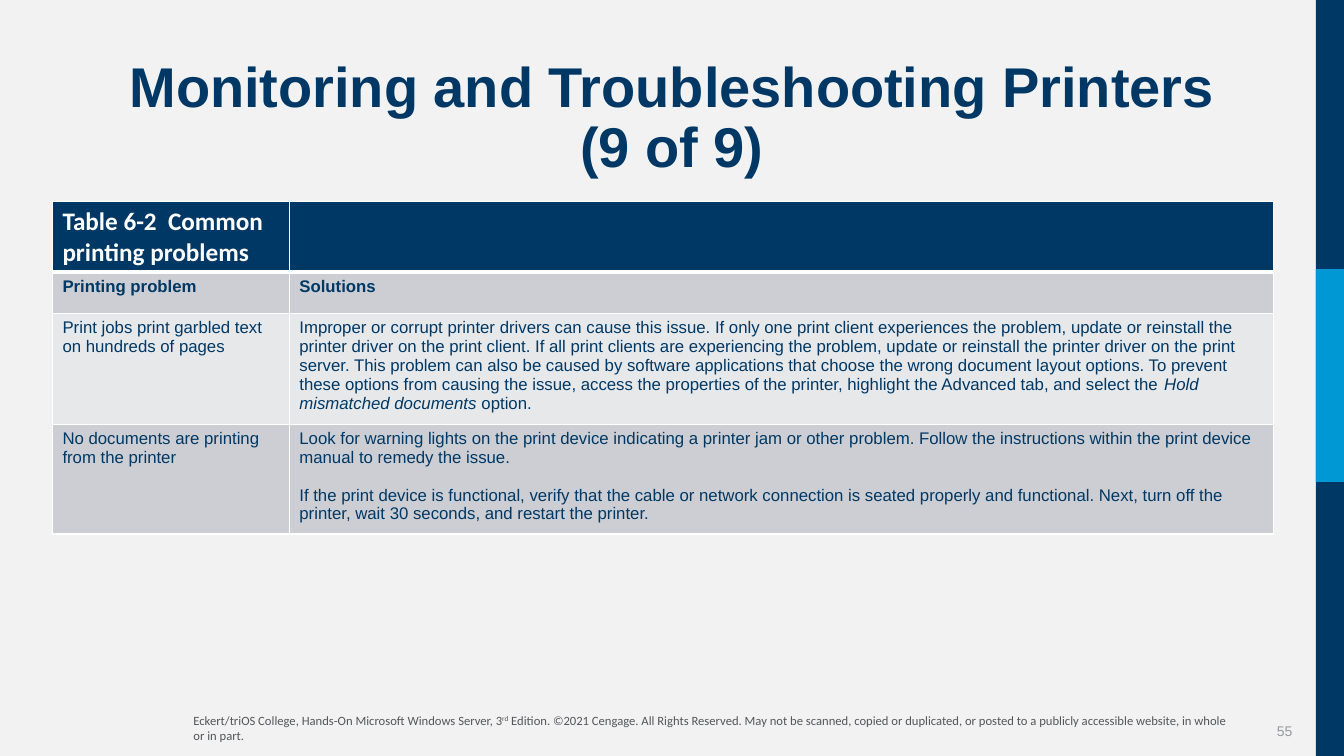
from lxml.etree import SubElement
from pptx import Presentation
from pptx.dml.color import RGBColor
from pptx.enum.shapes import MSO_SHAPE
from pptx.enum.text import MSO_ANCHOR, PP_ALIGN
from pptx.oxml.ns import qn
from pptx.util import Inches, Pt

COLORS = {
    "page": "F2F2F2", "navy": "003865", "sky": "0098D4", "white": "FFFFFF",
    "band": "CCCED3", "light": "E7E8EA", "number": "96999E", "notice": "53565A",
}
GRID = 0.1  # inches per column and per row


def color(name):
    return RGBColor.from_string(COLORS[name])


def units(*counts):
    return [Inches(count * GRID) for count in counts]


def write(paragraph, text, size=12, font="Arial", ink="navy", bold=False,
          italic=False, raised=False, align=None, line=None, before=None):
    """Add text to a paragraph; a newline becomes a line break."""
    for index, part in enumerate(text.split("\n")):
        if index:
            paragraph.add_line_break()
        run = paragraph.add_run()
        run.text = part
        run.font.size = Pt(size)
        run.font.name = font
        run.font.bold = bold
        run.font.italic = italic
        run.font.color.rgb = color(ink)
        if raised:
            run._r.get_or_add_rPr().set("baseline", "30000")
    if align is not None:
        paragraph.alignment = align
    if line is not None:
        paragraph.line_spacing = line
    if before is not None:
        paragraph.space_before = Pt(before)


class Deck:
    def __init__(self, columns, rows):
        self.presentation = Presentation()
        self.presentation.slide_width, self.presentation.slide_height = units(columns, rows)
        self.slide = self.presentation.slides.add_slide(self.presentation.slide_layouts[5])
        self.slide.background.fill.solid()
        self.slide.background.fill.fore_color.rgb = color("page")

    def title(self, text, left, top, width, height):
        heading = self.slide.shapes.title
        heading.left, heading.top, heading.width, heading.height = units(left, top, width, height)
        heading.text_frame.vertical_anchor = MSO_ANCHOR.MIDDLE
        write(heading.text_frame.paragraphs[0], text, size=40, bold=True,
              align=PP_ALIGN.CENTER, line=0.9)

    def bar(self, fill, left, top, width, height):
        band = self.slide.shapes.add_shape(MSO_SHAPE.RECTANGLE, *units(left, top, width, height))
        band.shadow.inherit = False
        band.fill.solid()
        band.fill.fore_color.rgb = color(fill)
        band.line.fill.background()

    def label(self, pieces, left, top, width, height, anchor=MSO_ANCHOR.TOP, **style):
        frame = self.slide.shapes.add_textbox(*units(left, top, width, height)).text_frame
        frame.word_wrap = True
        frame.vertical_anchor = anchor
        for text, extra in pieces:
            write(frame.paragraphs[0], text, **style, **extra)

    def border(self, cell, widths):
        properties = cell._tc.get_or_add_tcPr()
        for position, (side, width) in enumerate(widths.items()):
            edge = SubElement(properties, qn(f"a:ln{side}"), w=str(Pt(width)))
            fill = SubElement(edge, qn("a:solidFill"))
            SubElement(fill, qn("a:srgbClr"), val=COLORS["white"])
            properties.insert(position, edge)

    def table(self, rows, fills, widths, row_height, left, top):
        grid = self.slide.shapes.add_table(
            len(rows), len(widths), *units(left, top, sum(widths), row_height * len(rows))).table
        for column, width in zip(grid.columns, units(*widths)):
            column.width = width
        for r, (row, fill) in enumerate(zip(rows, fills)):
            for c, paragraphs in enumerate(row):
                cell = grid.cell(r, c)
                cell.fill.solid()
                cell.fill.fore_color.rgb = color(fill)
                self.border(cell, {"L": 1, "R": 1, "T": 3 if r == 1 else 1,
                                   "B": 3 if r == 0 else 1})
                for index, pieces in enumerate(paragraphs):
                    frame = cell.text_frame
                    paragraph = frame.add_paragraph() if index else frame.paragraphs[0]
                    for text, style in pieces:
                        write(paragraph, text, **style)


PROBLEMS = [
    # Table caption
    [[[("Table 6-2  Common printing problems",
        dict(size=18, font="Calibri", ink="white", bold=True))]], []],
    # Column headings
    [[[("Printing problem", dict(bold=True))]], [[("Solutions", dict(bold=True))]]],
    # Garbled text
    [[[("Print jobs print garbled text on hundreds of pages", {})]],
     [[("Improper or corrupt printer drivers can cause this issue. If only one print client "
        "experiences the problem, update or reinstall the printer driver on the print client. "
        "If all print clients are experiencing the problem, update or reinstall the printer "
        "driver on the print server. This problem can also be caused by software applications "
        "that choose the wrong document layout options. To prevent these options from causing "
        "the issue, access the properties of the printer, highlight the Advanced tab, and "
        "select the ", {}),
       ("Hold mismatched documents ", dict(italic=True)),
       ("option.", {})]]],
    # Nothing printing
    [[[("No documents are printing from the printer", {})]],
     [[("Look for warning lights on the print device indicating a printer jam or other problem. "
        "Follow the instructions within the print device manual to remedy the issue.", {})],
      [("If the print device is functional, verify that the cable or network connection is "
        "seated properly and functional. Next, turn off the printer, wait 30 seconds, and "
        "restart the printer.", dict(before=13.4))]]],
]
COPYRIGHT = [
    ("Eckert/triOS College, Hands-On Microsoft Windows Server, 3", {}),
    ("rd", dict(raised=True)),
    ("\u00a0Edition. ©2021 Cengage. All Rights Reserved. May not be scanned, copied or "
     "duplicated, or posted to a publicly accessible website, in whole or in part.", {}),
]


def main():
    deck = Deck(133.33, 75)

    # Page number and copyright line
    deck.label([("55", {})], 121.2, 70.5, 8, 4, anchor=MSO_ANCHOR.MIDDLE,
               size=10, ink="number", align=PP_ALIGN.RIGHT)
    deck.label(COPYRIGHT, 18.2, 70.2, 105.1, 4, size=9, font="Calibri", ink="notice")

    # Side bar
    deck.bar("navy", 130.55, 0, 2.78, 75)
    deck.bar("sky", 130.55, 26.7, 2.78, 21.1)

    # Title and table
    deck.title("Monitoring and Troubleshooting Printers\n(9 of 9)", 5.2, 5.2, 122.9, 13.3)
    deck.table(PROBLEMS, ["navy", "band", "light", "band"], [23.5, 97.6], 4.1, 5.2, 20)

    deck.presentation.save("out.pptx")


if __name__ == "__main__":
    main()
